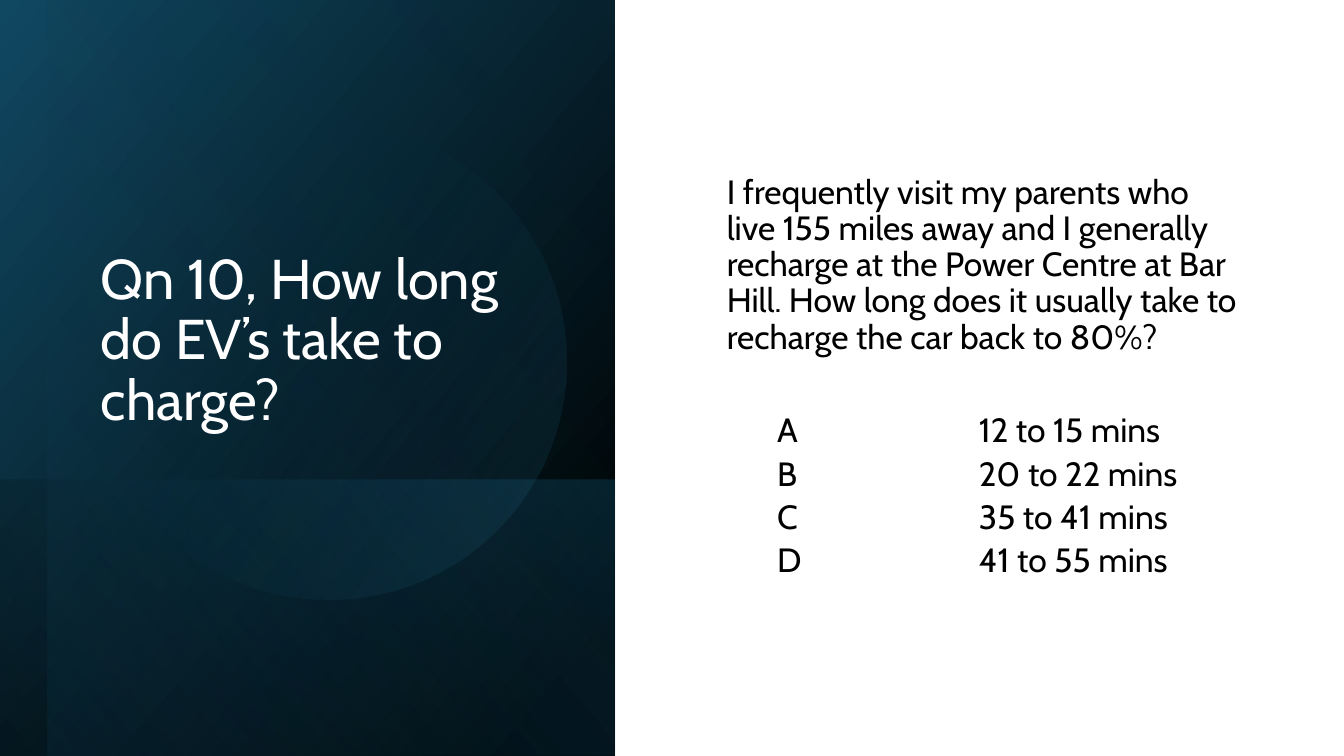
"""Build a quiz slide with a shaded title panel and four answer options."""
from lxml.etree import SubElement
from pptx import Presentation
from pptx.dml.color import RGBColor
from pptx.enum.shapes import MSO_SHAPE
from pptx.enum.text import MSO_ANCHOR
from pptx.oxml.ns import qn
from pptx.util import Inches, Pt

WIDTH, HEIGHT = Inches(13.33), Inches(7.5)
FONT = "Cabin"
BLACK = RGBColor(0x00, 0x00, 0x00)
WHITE = RGBColor(0xFF, 0xFF, 0xFF)
NAVY = RGBColor(0x10, 0x48, 0x62)
TEAL = RGBColor(0x15, 0x60, 0x82)
SKY = RGBColor(0x46, 0xB1, 0xE1)

TITLE = "Qn 10, How long do EV’s take to charge?"
QUESTION = (
    "I frequently visit my parents who live 155 miles away and I generally "
    "recharge at the Power Centre at Bar Hill. How long does it usually take "
    "to recharge the car back to 80%?"
)
ANSWERS = {
    "A": "12 to 15 mins",
    "B": "20 to 22 mins",
    "C": "35 to 41 mins",
    "D": "41 to 55 mins",
}


def place(left, top, width, height):
    """Turn percentages of the slide's size into lengths."""
    return (
        int(WIDTH * left / 100),
        int(HEIGHT * top / 100),
        int(WIDTH * width / 100),
        int(HEIGHT * height / 100),
    )


def add_glow(page, area, stops, angle, kind=MSO_SHAPE.RECTANGLE, turn=90, flip=True):
    """Add a turned shape whose gradient stops are (position, colour, opacity)."""
    shape = page.shapes.add_shape(kind, *place(*area))
    shape.shadow.inherit = False
    shape.line.fill.background()
    shape.rotation = turn
    properties = shape._element.spPr
    if flip:
        properties.find(qn("a:xfrm")).set("flipH", "1")
    shape.fill.gradient()
    shape.fill.gradient_angle = 360 - angle
    for stop, (position, colour, _) in zip(shape.fill.gradient_stops, stops):
        stop.position = position / 100
        stop.color.rgb = colour
    for colour_node, (_, _, opacity) in zip(properties.iter(qn("a:srgbClr")), stops):
        SubElement(colour_node, qn("a:alpha"), val=str(opacity * 1000))


def add_box(page, area, anchor):
    """Add a wrapping text box and return its text frame."""
    frame = page.shapes.add_textbox(*place(*area)).text_frame
    frame.word_wrap = True
    frame.vertical_anchor = anchor
    return frame


def write(para, text, size=24, colour=BLACK, before=0, indent=0):
    """Fill a paragraph with one formatted span."""
    para.line_spacing = 0.9
    para.space_before = Pt(before)
    if indent:
        settings = para._p.get_or_add_pPr()
        settings.set("marL", str(Inches(indent)))
        settings.set("indent", "0")
        settings.set("defTabSz", str(Inches(1)))
    span = para.add_run()
    span.text = text
    span.font.name = FONT
    span.font.size = Pt(size)
    span.font.color.rgb = colour


def add_panel(page):
    """Layer the gradients behind the title."""
    add_glow(page, (-5.25, 9.33, 56.25, 81.33), [(8, BLACK, 100), (100, NAVY, 100)], 50)
    add_glow(page, (12.53, 41.07, 20.55, 81.33), [(2, TEAL, 29), (100, BLACK, 30)], 130)
    add_glow(page, (-3.45, 12.4, 56.25, 75.07), [(0, BLACK, 0), (99, TEAL, 11)], 130)
    add_glow(page, (6.75, 16.4, 35.4, 62.93), [(39, TEAL, 0), (100, SKY, 15)], 290,
             kind=MSO_SHAPE.OVAL, turn=101.6, flip=False)


def add_question(page):
    """Write the question with its lettered answers below."""
    frame = add_box(page, (53.34, 9.47, 39.91, 80.93), MSO_ANCHOR.MIDDLE)
    write(frame.paragraphs[0], QUESTION)
    for index, (letter, answer) in enumerate(ANSWERS.items()):
        write(frame.add_paragraph(), f"{letter}\t\t{answer}",
              before=5 if index else 41, indent=0.5)


def main():
    """Build and save the deck."""
    deck = Presentation()
    deck.slide_width, deck.slide_height = WIDTH, HEIGHT
    page = deck.slides.add_slide(deck.slide_layouts[6])
    add_panel(page)
    title = add_box(page, (6.75, 8.53, 34.73, 49.33), MSO_ANCHOR.BOTTOM)
    write(title.paragraphs[0], TITLE, size=40, colour=WHITE)
    add_question(page)
    deck.save("out.pptx")


if __name__ == "__main__":
    main()
